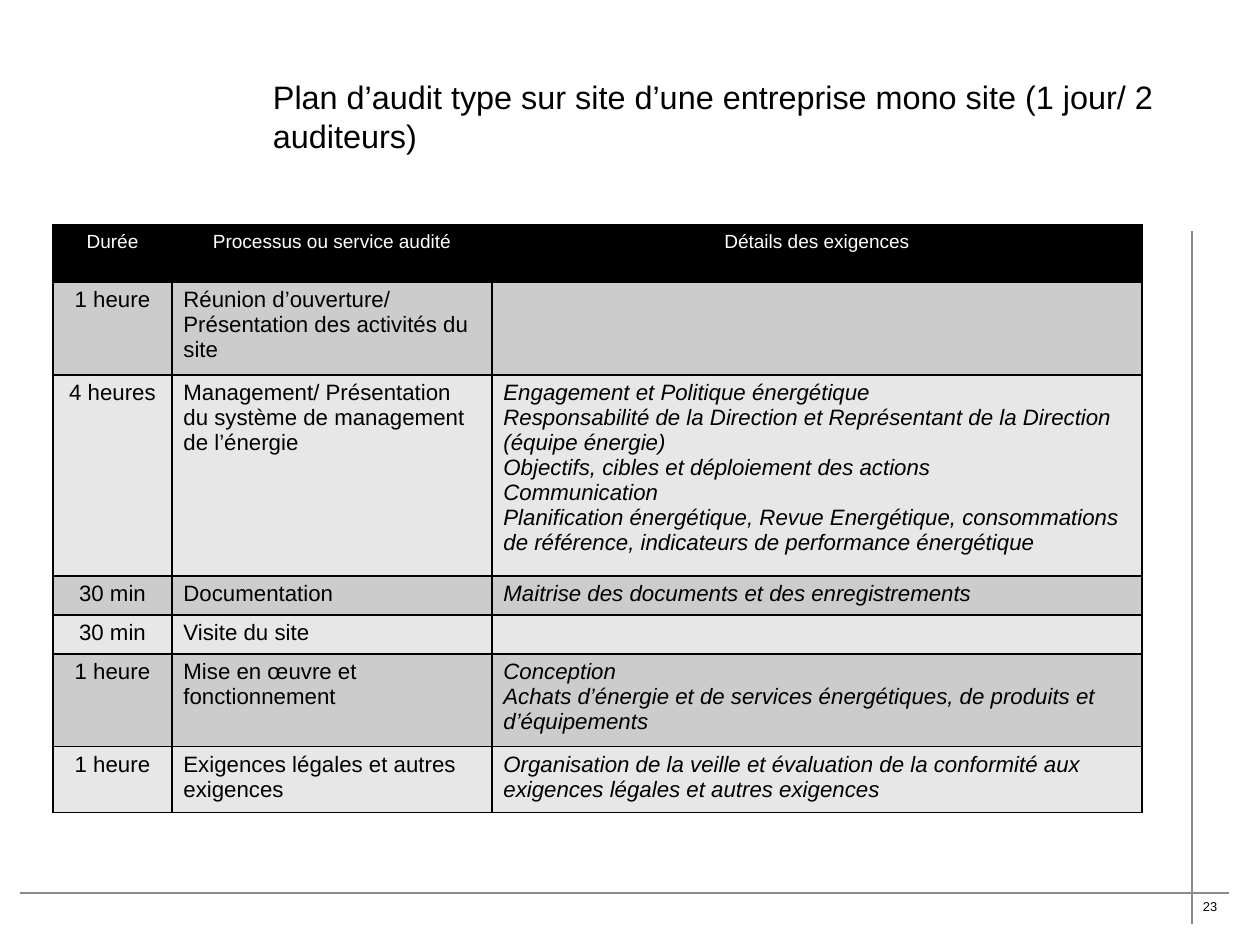
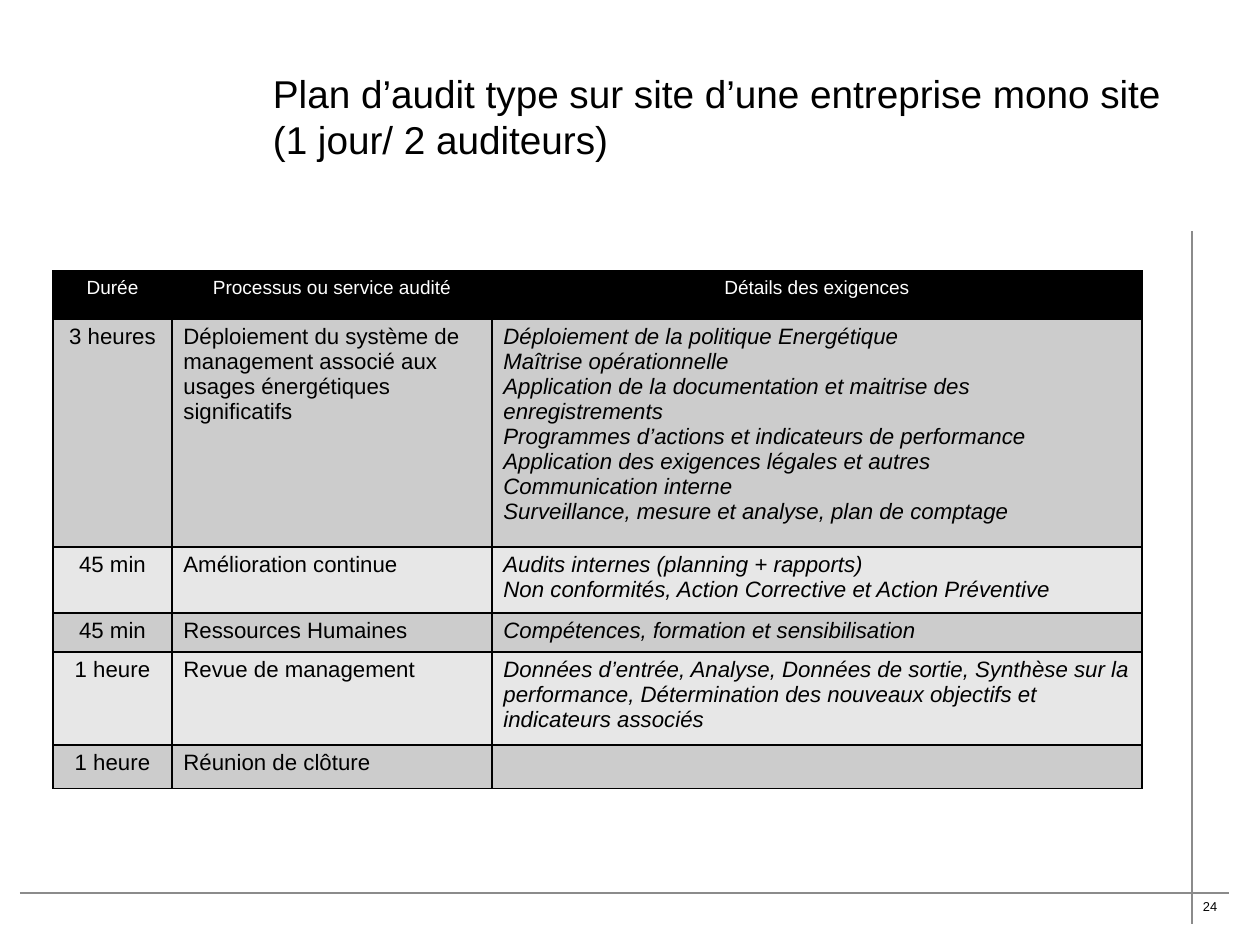
from lxml.etree import SubElement as Sub
from pptx import Presentation
from pptx.dml.color import RGBColor as Rgb
from pptx.enum.shapes import MSO_CONNECTOR as Link
from pptx.enum.text import MSO_ANCHOR as Anchor, PP_ALIGN as Align
from pptx.oxml.ns import qn
from pptx.util import Pt

SCALE = 8000  # EMU in one px
INK = {"text": "000000", "head": "000000", "white": "FFFFFF", "rule": "8B8B8B",
       "odd": "CCCCCC", "even": "E7E7E7", "edge": "000000"}
FONT = "Arial"
WIDTHS = [119, 320, 650]
HEAD = ["Durée", "Processus ou service audité", "Détails des exigences"]
TITLE = "Plan d’audit type sur site d’une entreprise mono site (1 jour/ 2 auditeurs)"

# Each row: height, duration, process, list of details
DAY_ONE = [
    (93, "1 heure", "Réunion d’ouverture/ Présentation des activités du site", []),
    (201, "4 heures",
     "Management/ Présentation du système de management de l’énergie",
     ["Engagement et Politique énergétique",
      "Responsabilité de la Direction et Représentant de la Direction (équipe énergie)",
      "Objectifs, cibles et déploiement des actions",
      "Communication",
      "Planification énergétique, Revue Energétique, consommations de référence, "
      "indicateurs de performance énergétique"]),
    (39, "30 min", "Documentation", ["Maitrise des documents et des enregistrements"]),
    (39, "30 min", "Visite du site", []),
    (93, "1 heure", "Mise en œuvre et fonctionnement",
     ["Conception",
      "Achats d’énergie et de services énergétiques, de produits et d’équipements"]),
    (66, "1 heure", "Exigences légales et autres exigences",
     ["Organisation de la veille et évaluation de la conformité aux exigences "
      "légales et autres exigences"]),
]
DAY_TWO = [
    (228, "3 heures",
     "Déploiement du système de management associé aux usages énergétiques significatifs",
     ["Déploiement de la politique Energétique",
      "Maîtrise opérationnelle",
      "Application de la documentation et maitrise des enregistrements",
      "Programmes d’actions et indicateurs de performance",
      "Application des exigences légales et autres",
      "Communication interne",
      "Surveillance, mesure et analyse, plan de comptage"]),
    (66, "45 min", "Amélioration continue",
     ["Audits internes (planning + rapports)",
      "Non conformités, Action Corrective et Action Préventive"]),
    (39, "45 min", "Ressources Humaines", ["Compétences, formation et sensibilisation"]),
    (93, "1 heure", "Revue de management",
     ["Données d’entrée, Analyse, Données de sortie, Synthèse sur la performance, "
      "Détermination des nouveaux objectifs et indicateurs associés"]),
    (44, "1 heure", "Réunion de clôture", []),
]
# Each slide: page, title size, table top, head height, rows
PAGES = [(23, 20.4, 225, 57, DAY_ONE), (24, 24.4, 271, 48, DAY_TWO)]


def px(n):
    return n * SCALE


class Deck:
    """Holds the style and the current slide."""

    def __init__(self, wide, high):
        self.prs = Presentation()
        self.prs.slide_width, self.prs.slide_height = px(wide), px(high)

    def start(self, page):
        """Add a slide with its rules and page number."""
        self.slide = self.prs.slides.add_slide(self.prs.slide_layouts[6])
        self.rule(20, 893, 1229, 893)
        self.rule(1192, 924, 1192, 231)
        self.text(str(page), 1192, 893, 47, 27, 8.1, Anchor.TOP)

    def rule(self, *ends):
        line = self.slide.shapes.add_connector(Link.STRAIGHT, *map(px, ends))
        line.line.width = Pt(1)
        line.line.color.rgb = Rgb.from_string(INK["rule"])
        Sub(line._element.spPr, qn("a:effectLst"))

    def text(self, words, x, y, w, h, size, anchor):
        box = self.slide.shapes.add_textbox(*map(px, (x, y, w, h)))
        frame = box.text_frame
        look = {"word_wrap": True, "vertical_anchor": anchor,
                "margin_left": px(11), "margin_right": px(8)}
        for key, value in look.items():
            setattr(frame, key, value)
        self.lay(frame, [words], size)

    def lay(self, frame, lines, size, ink="text", align=Align.LEFT, italic=False):
        """Put one paragraph per line in the frame."""
        look = {"name": FONT, "size": Pt(size), "bold": False, "italic": italic}
        for i, words in enumerate(lines):
            para = frame.add_paragraph() if i else frame.paragraphs[0]
            para.alignment = align
            run = para.add_run()
            run.text = words
            for key, value in look.items():
                setattr(run.font, key, value)
            run.font.color.rgb = Rgb.from_string(INK[ink])
        if not lines:
            Sub(frame.paragraphs[0]._p, qn("a:endParaRPr"), sz=str(size * 100))

    def edge(self, cell):
        """Draw the four borders of a cell."""
        props = cell._tc.get_or_add_tcPr()
        for side in "LRTB":
            line = Sub(props, qn("a:ln" + side), w=str(Pt(1)))
            Sub(Sub(line, qn("a:solidFill")), qn("a:srgbClr"), val=INK["edge"])

    def cell(self, cell, lines, fill, size, **look):
        self.edge(cell)
        cell.fill.solid()
        cell.fill.fore_color.rgb = Rgb.from_string(INK[fill])
        self.lay(cell.text_frame, lines, size, **look)

    def table(self, x, y, top, rows):
        tall = [top] + [row[0] for row in rows]
        grid = self.slide.shapes.add_table(
            len(tall), len(WIDTHS), *map(px, (x, y, sum(WIDTHS), sum(tall)))).table
        grid.first_row = grid.horz_banding = False
        for col, wide in zip(grid.columns, WIDTHS):
            col.width = px(wide)
        for row, high in zip(grid.rows, tall):
            row.height = px(high)
        for c, words in enumerate(HEAD):
            self.cell(grid.cell(0, c), [words], "head", 12,
                      ink="white", align=Align.CENTER)
        for r, (_, time, task, notes) in enumerate(rows, 1):
            fill = "odd" if r % 2 else "even"
            self.cell(grid.cell(r, 0), [time], fill, 14, align=Align.CENTER)
            self.cell(grid.cell(r, 1), [task], fill, 14)
            self.cell(grid.cell(r, 2), notes, fill, 14, italic=True)


def main():
    deck = Deck(1260, 945)
    for page, size, y, top, rows in PAGES:
        deck.start(page)
        deck.text(TITLE, 262, 53, 911, 126, size, Anchor.MIDDLE)
        deck.table(53, y, top, rows)
    deck.prs.save("out.pptx")


if __name__ == "__main__":
    main()
